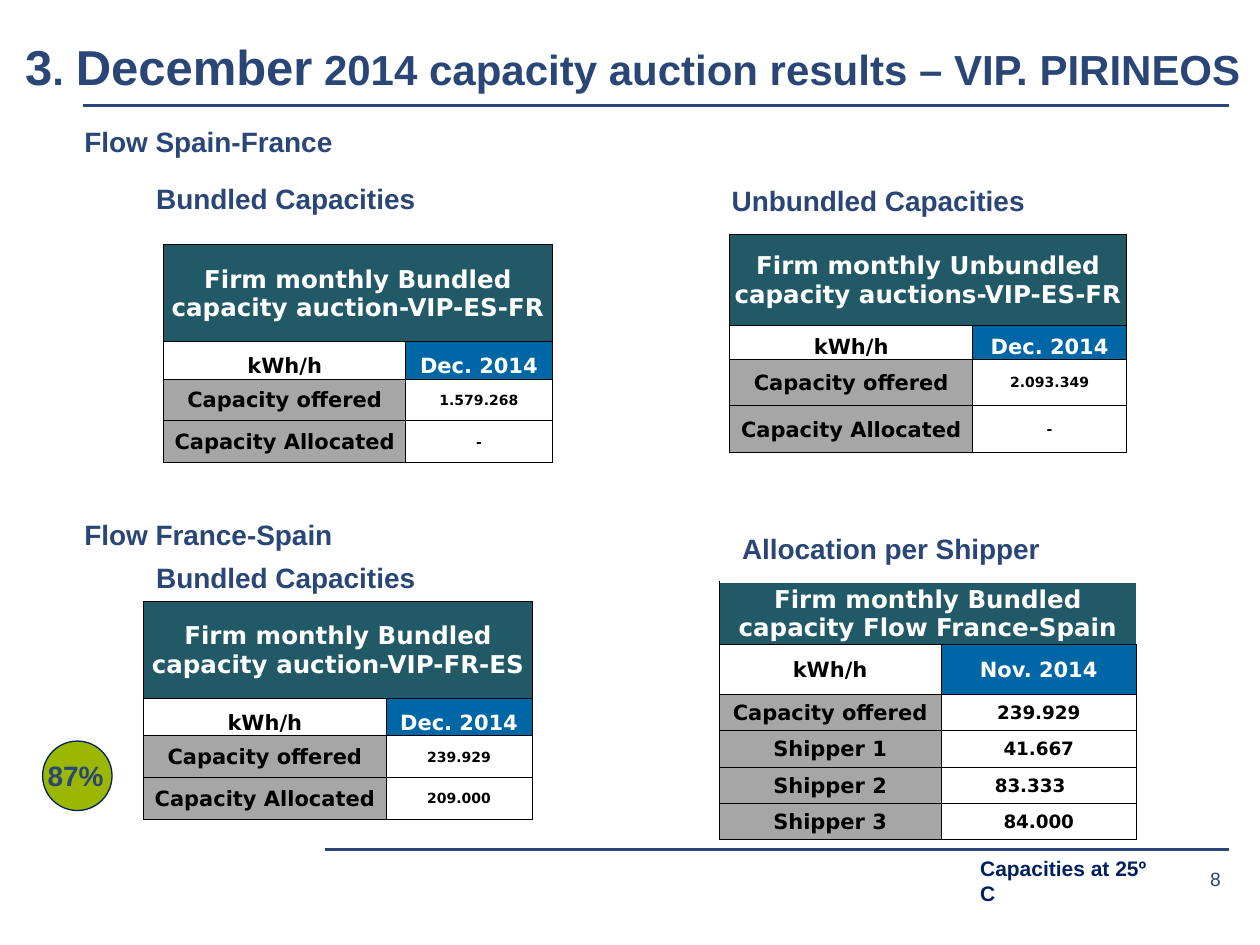
from dataclasses import dataclass

from lxml import etree
from pptx import Presentation
from pptx import util as u
from pptx.dml.color import RGBColor
from pptx.enum import shapes, text
from pptx.oxml import parse_xml
from pptx.oxml.ns import nsdecls, qn


@dataclass(frozen=True)
class Theme:
    navy: str = "2A4677"
    deep_navy: str = "002060"
    teal: str = "215967"
    blue: str = "0067A6"
    grey: str = "A6A6A6"
    green: str = "9CB700"
    white: str = "FFFFFF"
    black: str = "000000"
    font: str = "Arial"
    table_font: str = "DejaVu Sans"
    title_large: float = 28
    title: float = 24
    heading: float = 16
    table_title: float = 14
    label: float = 12
    page_number: float = 11
    shipper_value: float = 10.5
    value: float = 8


THEME = Theme()
CENTER = text.PP_ALIGN.CENTER
MIDDLE = text.MSO_ANCHOR.MIDDLE
BOTTOM = text.MSO_ANCHOR.BOTTOM


def style_run(run, size, color, font=THEME.font, bold=True):
    run.font.name = font
    run.font.size = u.Pt(size)
    run.font.bold = bold
    run.font.color.rgb = RGBColor.from_string(color)


def add_text(slide, box, content, size, color=THEME.navy, bold=True, space_after=0):
    shape = slide.shapes.add_textbox(*map(u.Cm, box))
    shape.text_frame.word_wrap = True
    shape.text_frame.text = content
    paragraph = shape.text_frame.paragraphs[0]
    paragraph.space_after = u.Pt(space_after)
    style_run(paragraph.runs[0], size, color, bold=bold)
    return shape


def remove_margins(frame):
    frame.margin_left = frame.margin_right = frame.margin_top = frame.margin_bottom = 0


def add_rule(slide, left, right, top):
    line = slide.shapes.add_connector(
        shapes.MSO_CONNECTOR.STRAIGHT, u.Cm(left), u.Cm(top), u.Cm(right), u.Cm(top))
    line.line.color.rgb = RGBColor.from_string(THEME.navy)
    line.line.width = u.Pt(1.5)
    etree.SubElement(line._element.spPr, qn("a:effectLst"))


def set_borders(cell, sides):
    properties = cell._tc.get_or_add_tcPr()
    for index, side in enumerate(sides):
        properties.insert(index, parse_xml(
            f'<a:ln{side} {nsdecls("a")} w="6350"><a:solidFill>'
            f'<a:srgbClr val="{THEME.black}"/></a:solidFill></a:ln{side}>'))


def fill_cell(cell, content, size, color, fill=None, anchor=MIDDLE, sides="LRTB"):
    cell.margin_left = cell.margin_right = cell.margin_top = u.Cm(0.03)
    cell.margin_bottom = 0
    cell.vertical_anchor = anchor
    if fill:
        cell.fill.solid()
        cell.fill.fore_color.rgb = RGBColor.from_string(fill)
    else:
        cell.fill.background()
    set_borders(cell, sides)
    cell.text_frame.text = content
    paragraph = cell.text_frame.paragraphs[0]
    paragraph.alignment = CENTER
    for run in paragraph.runs:
        style_run(run, size, color, THEME.table_font)


def add_capacity_table(slide, left, top, columns, rows, title, month, values,
                       value_size=THEME.value, month_anchor=BOTTOM, title_sides="LRTB"):
    frame = slide.shapes.add_table(
        len(rows), len(columns), u.Cm(left), u.Cm(top), u.Cm(sum(columns)), u.Cm(sum(rows)))
    table = frame.table
    table.first_row = table.horz_banding = False
    for column, width in zip(table.columns, columns):
        column.width = u.Cm(width)
    for row, height in zip(table.rows, rows):
        row.height = u.Cm(height)
    for column, content in enumerate((title, "")):
        fill_cell(table.cell(0, column), content, THEME.table_title, THEME.white,
                  THEME.teal, sides=title_sides)
    table.cell(0, 0).merge(table.cell(0, 1))
    fill_cell(table.cell(1, 0), "kWh/h", THEME.label, THEME.black, anchor=month_anchor)
    fill_cell(table.cell(1, 1), month, THEME.label, THEME.white, THEME.blue, month_anchor)
    for row, (label, value) in enumerate(values, start=2):
        fill_cell(table.cell(row, 0), label, THEME.label, THEME.black, THEME.grey)
        fill_cell(table.cell(row, 1), value, value_size, THEME.black, THEME.white)
    return table


def add_heading(slide, left, top, width, content):
    add_text(slide, (left, top, width, 0.94), content, THEME.heading, space_after=6)


def add_auction_panel(slide, box, heading, offset, columns, rows, title, offered, allocated):
    left, top, width = box
    add_heading(slide, left, top, width, heading)
    values = [("Capacity offered", offered), ("Capacity Allocated", allocated)]
    add_capacity_table(slide, left + offset[0], top + offset[1], columns, rows,
                       title, "Dec. 2014", values)


def add_shipper_panel(slide, left, top, width):
    add_heading(slide, left + 0.21, top, width, "Allocation per Shipper")
    shippers = ["41.667", "83.333", "84.000"]
    values = [("Capacity offered", "239.929")]
    values += [(f"Shipper {number}", value) for number, value in enumerate(shippers, start=1)]
    table = add_capacity_table(
        slide, left, top + 1.14, (4.47, 3.94), [1.27, 1] + [0.73] * len(values),
        "Firm monthly Bundled capacity Flow France-Spain", "Nov. 2014", values,
        THEME.shipper_value, MIDDLE, "LB")
    table.cell(4, 1).margin_right = u.Cm(0.38)


def add_title(slide, left, top, width, height):
    parts = [("3", THEME.title_large), (". ", THEME.title), ("December", THEME.title_large),
             (" 2014 capacity auction results – VIP. PIRINEOS", THEME.title)]
    shape = slide.shapes.add_textbox(*map(u.Cm, (left, top, width, height)))
    frame = shape.text_frame
    frame.word_wrap = True
    frame.vertical_anchor = BOTTOM
    remove_margins(frame)
    for content, size in parts:
        run = frame.paragraphs[0].add_run()
        run.text = content
        style_run(run, size, THEME.navy)
    add_rule(slide, 1.68, 24.77, top + 1.22)


def add_footer(slide, left, right, top):
    add_rule(slide, left, right, top)
    add_text(slide, (right - 5.26, top, 4.14, 0.76), "Capacities at 25º C",
             THEME.label, THEME.deep_navy)
    number = add_text(slide, (right - 2.16, top + 0.2, 2, 0.79), "8",
                      THEME.page_number, bold=False)
    remove_margins(number.text_frame)
    number.text_frame.vertical_anchor = MIDDLE
    number.text_frame.paragraphs[0].alignment = text.PP_ALIGN.RIGHT


def add_share_badge(slide, left, top, size):
    badge = slide.shapes.add_shape(
        shapes.MSO_SHAPE.OVAL, u.Cm(left), u.Cm(top), u.Cm(size), u.Cm(size))
    badge.shadow.inherit = False
    badge.fill.solid()
    badge.fill.fore_color.rgb = RGBColor.from_string(THEME.green)
    badge.line.color.rgb = RGBColor.from_string(THEME.deep_navy)
    badge.line.width = u.Pt(0.75)
    add_heading(slide, left - 0.15, top + 0.22, 2.59, "87%")


def main():
    presentation = Presentation()
    presentation.slide_width = u.Cm(25.4)
    presentation.slide_height = u.Cm(19.05)
    slide = presentation.slides.add_slide(presentation.slide_layouts[6])
    bundled_columns, bundled_rows = (4.88, 2.95), (1.96, 0.75, 0.84, 0.84)

    add_title(slide, 0.51, 0.91, 26.21, 1.02)
    add_heading(slide, 1.45, 2.39, 11.25, "Flow Spain-France")
    add_auction_panel(slide, (2.9, 3.53, 14.4), "Bundled Capacities", (0.4, 1.4),
                      bundled_columns, bundled_rows,
                      "Firm monthly Bundled capacity auction-VIP-ES-FR", "1.579.268", "-")
    add_auction_panel(slide, (14.5, 3.58, 13.21), "Unbundled Capacities", (0.21, 1.14),
                      (4.9, 3.1), (1.83, 0.69, 0.94, 0.94),
                      "Firm monthly Unbundled capacity auctions-VIP-ES-FR", "2.093.349", "-")
    add_heading(slide, 1.45, 10.31, 11.25, "Flow France-Spain")
    add_auction_panel(slide, (2.9, 11.18, 14.4), "Bundled Capacities", (0, 0.94),
                      bundled_columns, bundled_rows,
                      "Firm monthly Bundled capacity auction-VIP-FR-ES", "239.929", "209.000")
    add_shipper_panel(slide, 14.5, 10.59, 11.25)
    add_share_badge(slide, 0.86, 14.94, 1.4)
    add_footer(slide, 6.55, 24.77, 17.12)
    presentation.save("out.pptx")


if __name__ == "__main__":
    main()
